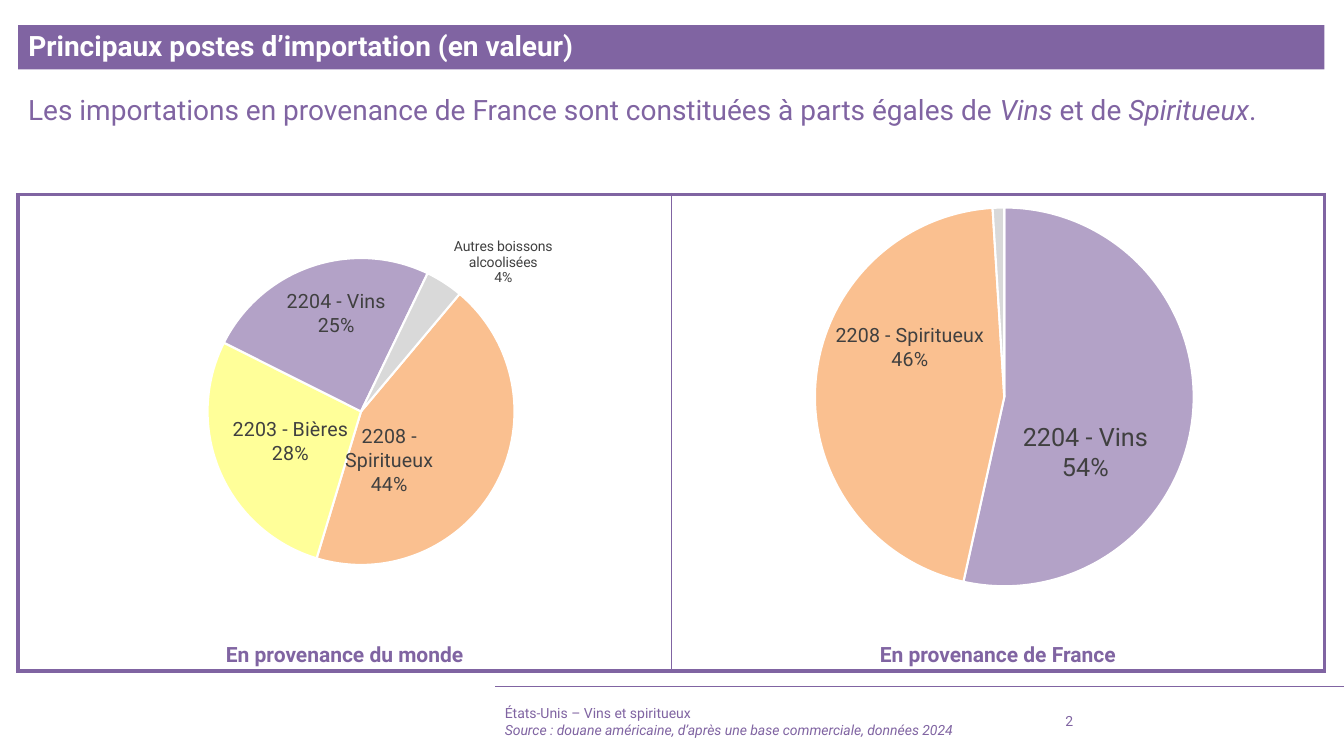
from lxml import etree
from pptx import Presentation
from pptx.chart.data import CategoryChartData
from pptx.dml.color import RGBColor
from pptx.enum.chart import XL_CHART_TYPE, XL_LABEL_POSITION
from pptx.enum.shapes import MSO_CONNECTOR
from pptx.enum.text import MSO_ANCHOR, MSO_AUTO_SIZE, PP_ALIGN
from pptx.oxml.ns import qn
from pptx.util import Pt

PIE = XL_CHART_TYPE.PIE
INSIDE, OUTSIDE = XL_LABEL_POSITION.CENTER, XL_LABEL_POSITION.OUTSIDE_END
TOP, MIDDLE = MSO_ANCHOR.TOP, MSO_ANCHOR.MIDDLE
LEFT, CENTER, JUSTIFY = PP_ALIGN.LEFT, PP_ALIGN.CENTER, PP_ALIGN.JUSTIFY

FONT = "Roboto"
COLORS = {
    "purple": "8064A2", "white": "FFFFFF", "label": "404040",
    "2204 - Vins": "B3A2C7", "2208 - Spiritueux": "FAC090",
    "2203 - Bières": "FFFF99", "Autres boissons alcoolisées": "D9D9D9",
}
MARGIN, COLUMN, PANEL_TOP, PANEL_HEIGHT = 13, 466.5, 139, 340.5
CHART_HEIGHT = 298

# Each label: size, position, horizontal and vertical shift as a share of the chart
PANELS = [
    {
        "caption": "En provenance du monde",
        "values": {"2208 - Spiritueux": 0.44, "2203 - Bières": 0.28,
                   "2204 - Vins": 0.25, "Autres boissons alcoolisées": 0.04},
        "start": 40,
        "plot": (0.29, 0.15, 0.47, 0.74),
        "labels": [(14, INSIDE, -0.06, 0.03), (14, INSIDE, 0, 0),
                   (14, INSIDE, 0, -0.06), (10, OUTSIDE, 0.01, 0.02)],
    },
    {
        "caption": "En provenance de France",
        "values": {"2204 - Vins": 0.54, "2208 - Spiritueux": 0.46,
                   "2203 - Bières": 0, "Autres boissons alcoolisées": 0.01},
        "start": 0,
        "plot": (0.22, 0.03, 0.58, 0.91),
        "labels": [(18, INSIDE, -0.02, 0.11), (14, INSIDE, 0, -0.1)],
    },
]


def color(name):
    return RGBColor.from_string(COLORS[name])


def format_font(font, size, color_name, bold=False, italic=False):
    font.name, font.size = FONT, Pt(size)
    font.bold, font.italic = bold, italic
    font.color.rgb = color(color_name)


def write_text(shape, paragraphs, size=10, color_name="purple", bold=False,
               align=LEFT, anchor=TOP, line_spacing=1.0):
    """Fill a shape; each paragraph is a list of (text, italic) runs."""
    frame = shape.text_frame
    frame.word_wrap = True
    frame.auto_size = MSO_AUTO_SIZE.NONE
    frame.vertical_anchor = anchor
    for index, runs in enumerate(paragraphs):
        paragraph = frame.add_paragraph() if index else frame.paragraphs[0]
        paragraph.alignment = align
        paragraph.line_spacing = line_spacing
        paragraph.space_before = Pt(0)
        for text, italic in runs:
            run = paragraph.add_run()
            run.text = text
            format_font(run.font, size, color_name, bold, italic)


def add_text(slide, left, top, width, height, paragraphs, **text_format):
    box = slide.shapes.add_textbox(Pt(left), Pt(top), Pt(width), Pt(height))
    write_text(box, paragraphs, **text_format)


def add_title(slide, text):
    title = slide.shapes.title
    title.left, title.top = Pt(MARGIN), Pt(18)
    title.width, title.height = Pt(2 * COLUMN), Pt(31.5)
    title.fill.solid()
    title.fill.fore_color.rgb = color("purple")
    write_text(title, [[(text, False)]], size=20, color_name="white", bold=True,
               anchor=MIDDLE, line_spacing=0.9)


def add_footer_line(slide):
    line = slide.shapes.add_connector(MSO_CONNECTOR.STRAIGHT,
                                      Pt(960), Pt(490.5), Pt(353.5), Pt(490.5))
    line.line.color.rgb = color("purple")
    line.line.width = Pt(0.5)
    etree.SubElement(line._element.spPr, qn("a:effectLst"))


def set_borders(cell, widths):
    """Draw the left, right, top and bottom borders, with widths in points."""
    properties = cell._tc.get_or_add_tcPr()
    for index, (side, width) in enumerate(zip("LRTB", widths)):
        border = etree.Element(qn(f"a:ln{side}"), w=str(Pt(width)))
        fill = etree.SubElement(border, qn("a:solidFill"))
        etree.SubElement(fill, qn("a:srgbClr"), val=COLORS["purple"])
        properties.insert(index, border)


def add_frame(slide):
    table = slide.shapes.add_table(1, 2, Pt(MARGIN), Pt(PANEL_TOP),
                                   Pt(2 * COLUMN), Pt(PANEL_HEIGHT)).table
    table.first_row = table.horz_banding = False
    for cell, widths in zip(table.iter_cells(), [(3, 1, 3, 3), (1, 3, 3, 3)]):
        cell.fill.background()
        set_borders(cell, widths)


def make_layout(**places):
    layout = etree.Element(qn("c:layout"))
    manual = etree.SubElement(layout, qn("c:manualLayout"))
    for name, value in places.items():
        etree.SubElement(manual, qn(f"c:{name}"), val=str(value))
    return layout


def place_plot(chart, start, plot):
    pie = chart.plots[0]._element
    for old in pie.findall(qn("c:firstSliceAng")):
        pie.remove(old)
    etree.SubElement(pie, qn("c:firstSliceAng"), val=str(start))
    area = pie.getparent()
    for old in area.findall(qn("c:layout")):
        area.remove(old)
    x, y, w, h = plot
    area.insert(0, make_layout(layoutTarget="inner", xMode="edge", yMode="edge",
                               x=x, y=y, w=w, h=h))


def add_labels(series, labels):
    """Show category and value, on two lines, on the first points."""
    series.data_labels.show_value = False
    for index, (size, position, _, _) in enumerate(labels):
        label = series.points[index].data_label
        format_font(label.font, size, "label")
        label.position = position
    for leader in series._element.iter(qn("c:showLeaderLines")):
        leader.set("val", "0")
    elements = list(series._element.iter(qn("c:dLbl")))
    for element, (_, _, x, y) in zip(elements, labels):
        element.find(qn("c:showCatName")).set("val", "1")
        number_format = etree.Element(qn("c:numFmt"), formatCode="0%", sourceLinked="0")
        element.find(qn("c:idx")).addnext(number_format)
        if x or y:
            number_format.addprevious(make_layout(x=x, y=y))
        separator = etree.SubElement(element, qn("c:separator"))
        separator.text = "\n"


def add_pie(slide, left, values, start, plot, labels):
    data = CategoryChartData(number_format="0%")
    data.categories = list(values)
    data.add_series("Importations", list(values.values()))
    chart = slide.shapes.add_chart(PIE, Pt(left), Pt(PANEL_TOP), Pt(COLUMN),
                                   Pt(CHART_HEIGHT), data).chart
    chart.has_title = chart.has_legend = False
    format_font(chart.font, 8, "label")
    chart.plots[0].vary_by_categories = True
    series = chart.plots[0].series[0]
    for index, category in enumerate(values):
        point = series.points[index].format
        point.fill.solid()
        point.fill.fore_color.rgb = color(category)
        point.line.color.rgb = color("white")
        point.line.width = Pt(1.5)
    add_labels(series, labels)
    place_plot(chart, start, plot)


def main():
    presentation = Presentation()
    presentation.slide_width, presentation.slide_height = Pt(960), Pt(540)
    slide = presentation.slides.add_slide(presentation.slide_layouts[5])

    add_footer_line(slide)
    add_frame(slide)
    add_title(slide, "Principaux postes d’importation (en valeur)")
    add_text(slide, MARGIN, 65, 2 * COLUMN, 58, [[
        ("Les importations en provenance de France sont constituées "
         "à parts égales de ", False),
        ("Vins ", True), ("et de ", False), ("Spiritueux", True), (".", False),
    ]], size=20, align=JUSTIFY, line_spacing=0.9)

    for index, panel in enumerate(PANELS):
        left = MARGIN + index * COLUMN
        add_text(slide, left, 454.5, COLUMN, 25, [[(panel["caption"], False)]],
                 size=15, bold=True, align=CENTER)
        add_pie(slide, left, panel["values"], panel["start"], panel["plot"],
                panel["labels"])

    add_text(slide, 353.5, 500.5, 391, 29, [
        [("États-Unis – Vins et spiritueux", False)],
        [("Source : douane américaine, d’après une base commerciale, données 2024", True)],
    ], anchor=MIDDLE)
    add_text(slide, 754, 500.5, 71, 29, [[("2", False)]], anchor=MIDDLE)
    presentation.save("out.pptx")


if __name__ == "__main__":
    main()
